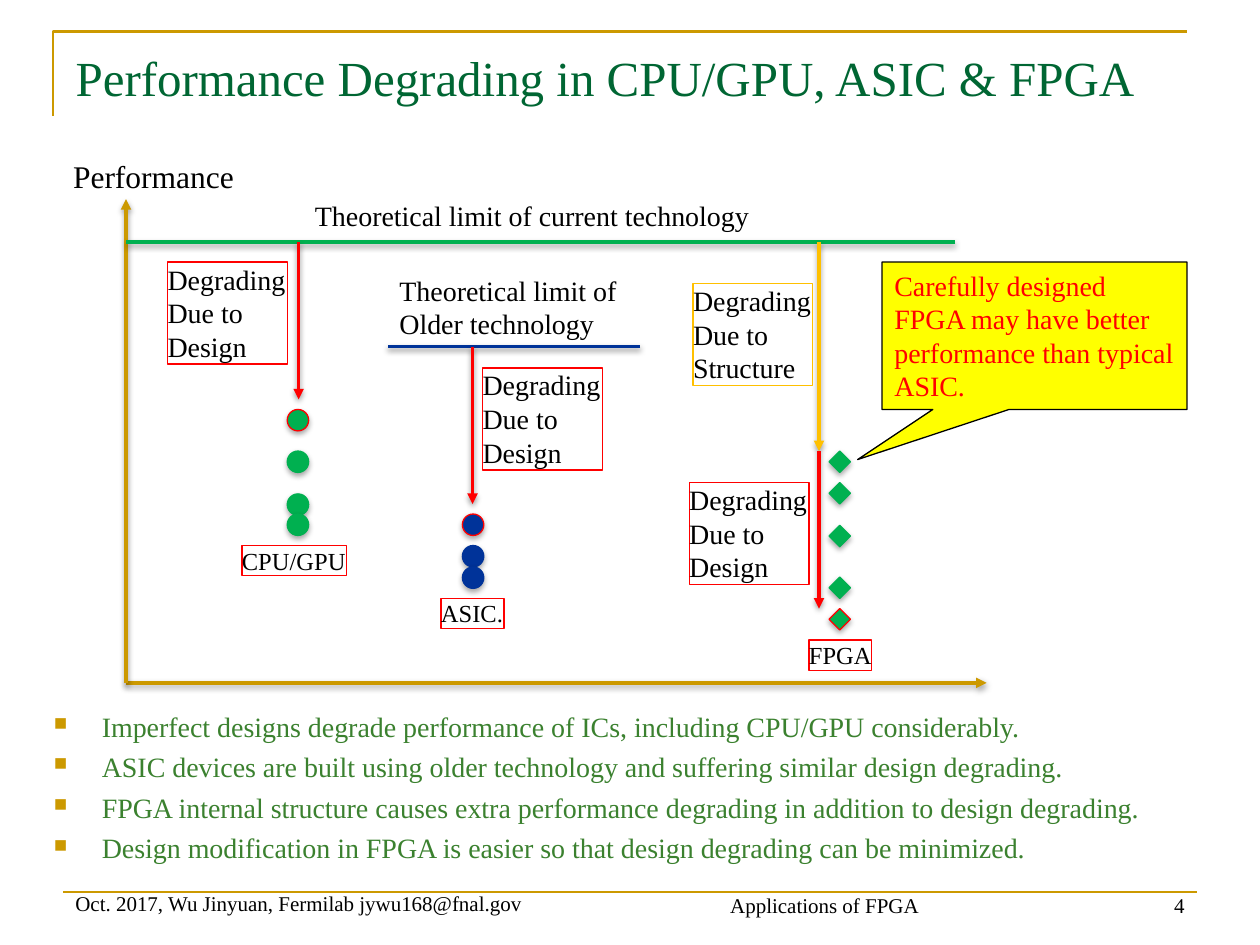
"""Build the slide on performance degrading in CPU/GPU, ASIC and FPGA."""
from lxml import etree
from pptx import Presentation
from pptx import util as u
from pptx.dml.color import RGBColor
from pptx.enum import shapes, text
from pptx.oxml import ns

COLORS = {"gold": "CC9900", "title": "006633", "bullet": "3B812F", "black": "000000",
          "red": "FF0000", "green": "00B050", "blue": "003399", "orange": "FFC000",
          "yellow": "FFFF00"}
RGB = {name: RGBColor.from_string(value) for name, value in COLORS.items()}
FONT = "Times New Roman"
LEFT, CENTER, RIGHT = text.PP_ALIGN.LEFT, text.PP_ALIGN.CENTER, text.PP_ALIGN.RIGHT


def write(frame, lines, size, color, align=LEFT, anchor=text.MSO_ANCHOR.TOP):
    frame.auto_size = text.MSO_AUTO_SIZE.NONE
    frame.vertical_anchor = anchor
    for number, line in enumerate(lines):
        paragraph = frame.add_paragraph() if number else frame.paragraphs[0]
        paragraph.alignment = align
        run = paragraph.add_run()
        run.text = line
        run.font.name, run.font.size = FONT, u.Pt(size)
        run.font.color.rgb = RGB[color]


def add_effects(shape, opacity):
    effects = etree.SubElement(shape._element.spPr, ns.qn("a:effectLst"))
    if opacity:
        shadow = etree.SubElement(effects, ns.qn("a:outerShdw"), blurRad="40000",
                                  dist="21000", dir="5400000", rotWithShape="0")
        black = etree.SubElement(shadow, ns.qn("a:srgbClr"), val=COLORS["black"])
        etree.SubElement(black, ns.qn("a:alpha"), val=str(opacity * 1000))


prs = Presentation()
prs.slide_width, prs.slide_height = u.Inches(10), u.Inches(7.5)
slide = prs.slides.add_slide(prs.slide_layouts[5])
parts = slide.shapes

title = parts.title
title.left, title.top = u.Inches(0.5), u.Inches(0.33)
title.width, title.height = u.Inches(8.75), u.Inches(0.75)
write(title.text_frame, ["Performance Degrading in CPU/GPU, ASIC & FPGA"], 28, "title")

corner = parts.build_freeform(u.Inches(0.42), u.Inches(0.92))
corner.add_line_segments([(u.Inches(0.42), u.Inches(0.25)),
                          (u.Inches(9.42), u.Inches(0.25))], close=False)
frame_line = corner.convert_to_shape()
frame_line.fill.background()
frame_line.line.color.rgb, frame_line.line.width = RGB["gold"], u.Pt(1.5)
frame_line.shadow.inherit = False

footers = [
    (0.5, 7.08, 3.83, 0.24, "Oct. 2017, Wu Jinyuan, Fermilab jywu168@fnal.gov", LEFT),
    (4.42, 7, 4.25, 0.33, "Applications of FPGA", CENTER),
    (8.75, 7.08, 0.75, 0.25, "4", RIGHT),
]
for *place, words, align in footers:
    footer = parts.add_textbox(*map(u.Inches, place))
    footer.text_frame.word_wrap = True
    write(footer.text_frame, [words], 12, "black", align, text.MSO_ANCHOR.BOTTOM)

findings = parts.add_textbox(u.Inches(0.33), u.Inches(5.58), u.Inches(9), u.Inches(1.42))
findings.text_frame.word_wrap = True
write(findings.text_frame, [
    "Imperfect designs degrade performance of ICs, including CPU/GPU considerably.",
    "ASIC devices are built using older technology and suffering similar design degrading.",
    "FPGA internal structure causes extra performance degrading in addition to design degrading.",
    "Design modification in FPGA is easier so that design degrading can be minimized.",
], 16, "bullet")
for number, finding in enumerate(findings.text_frame.paragraphs):
    props = finding._p.get_or_add_pPr()
    props.set("marL", str(u.Inches(0.38)))
    props.set("indent", str(u.Inches(-0.38)))
    bullet_color = etree.SubElement(props, ns.qn("a:buClr"))
    etree.SubElement(bullet_color, ns.qn("a:srgbClr"), val=COLORS["gold"])
    etree.SubElement(props, ns.qn("a:buSzPct"), val="65000")
    etree.SubElement(props, ns.qn("a:buChar"), char="■")
    if number:
        finding.space_before = u.Pt(4)

lines = [
    (0.5, 7.08, 9.5, 7.08, "gold", 1.5, False, 0),
    (1, 5.42, 7.83, 5.42, "gold", 2, True, 38),
    (1, 5.42, 1, 1.58, "gold", 2, True, 38),
    (7.58, 1.92, 1, 1.92, "green", 2, False, 38),
    (5.08, 2.75, 3.08, 2.75, "blue", 2, False, 38),
    (2.37, 1.92, 2.37, 3.17, "red", 2, True, 38),
    (3.75, 2.75, 3.75, 4, "red", 2, True, 38),
    (6.5, 1.92, 6.5, 3.58, "orange", 2, True, 38),
    (6.5, 3.58, 6.5, 4.83, "red", 2, True, 38),
]
for *ends, color, weight, arrow, opacity in lines:
    line = parts.add_connector(shapes.MSO_CONNECTOR.STRAIGHT, *map(u.Inches, ends))
    line.line.color.rgb, line.line.width = RGB[color], u.Pt(weight)
    if arrow:
        etree.SubElement(line.line._get_or_add_ln(), ns.qn("a:tailEnd"), type="triangle")
    add_effects(line, opacity)

OVAL, DIAMOND = shapes.MSO_SHAPE.OVAL, shapes.MSO_SHAPE.DIAMOND
devices = [
    (OVAL, 2.28, "green", [3.58, 3.92, 4.08], 3.25),
    (OVAL, 3.67, "blue", [4.33, 4.5], 4.08),
    (DIAMOND, 6.58, "green", [3.58, 3.83, 4.17, 4.58], 4.83),
]
for kind, left, color, tops, typical in devices:
    for top in tops + [typical]:
        marker = parts.add_shape(kind, u.Inches(left), u.Inches(top),
                                 u.Inches(0.17), u.Inches(0.17))
        marker.fill.solid()
        marker.fill.fore_color.rgb = RGB[color]
        marker.line.color.rgb = RGB["red" if top == typical else color]
        marker.line.width = u.Pt(0.75)
        add_effects(marker, 35)

by_design = ["Degrading", "Due to", "Design"]
labels = [
    (0.58, 1.25, 1.29, 0.3, ["Performance"], 18, None),
    (2.5, 1.58, 3.5, 0.27, ["Theoretical limit of current technology"], 16, None),
    (3.17, 2.17, 1.81, 0.54, ["Theoretical limit of", "Older technology"], 16, None),
    (1.33, 2.08, 0.95, 0.81, by_design, 16, "red"),
    (3.83, 2.92, 0.95, 0.81, by_design, 16, "red"),
    (5.47, 3.83, 0.95, 0.81, by_design, 16, "red"),
    (5.5, 2.25, 0.95, 0.81, ["Degrading", "Due to", "Structure"], 16, "orange"),
    (1.92, 4.33, 0.83, 0.24, ["CPU/GPU"], 14, "red"),
    (3.5, 4.75, 0.5, 0.24, ["ASIC."], 14, "red"),
    (6.42, 5.08, 0.5, 0.24, ["FPGA"], 14, "red"),
]
for *place, words, size, border in labels:
    label = parts.add_textbox(*map(u.Inches, place))
    body = label.text_frame
    body.word_wrap = False
    body.margin_left = body.margin_right = body.margin_top = body.margin_bottom = 0
    write(body, words, size, "black")
    if border:
        label.line.color.rgb, label.line.width = RGB[border], u.Pt(0.75)

remark = parts.add_shape(shapes.MSO_SHAPE.RECTANGULAR_CALLOUT, u.Inches(7), u.Inches(2.08),
                         u.Inches(2.42), u.Inches(1.17))
remark.adjustments[0], remark.adjustments[1] = -0.58, 0.84
remark.fill.solid()
remark.fill.fore_color.rgb = RGB["yellow"]
remark.line.color.rgb, remark.line.width = RGB["black"], u.Pt(0.75)
remark.shadow.inherit = False
remark.text_frame.word_wrap = True
write(remark.text_frame,
      ["Carefully designed FPGA may have better performance than typical ASIC."], 16, "red")

prs.save("out.pptx")
